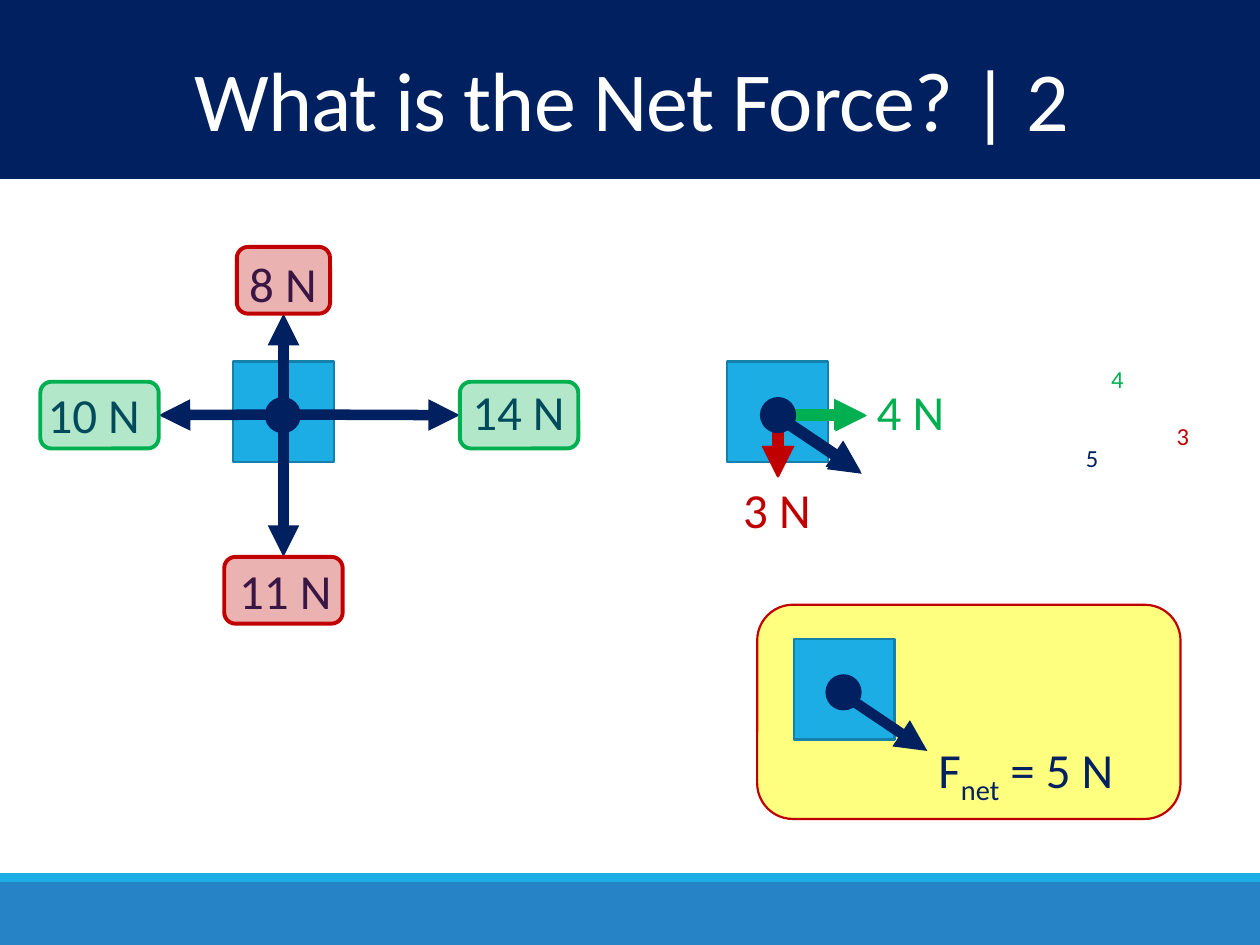
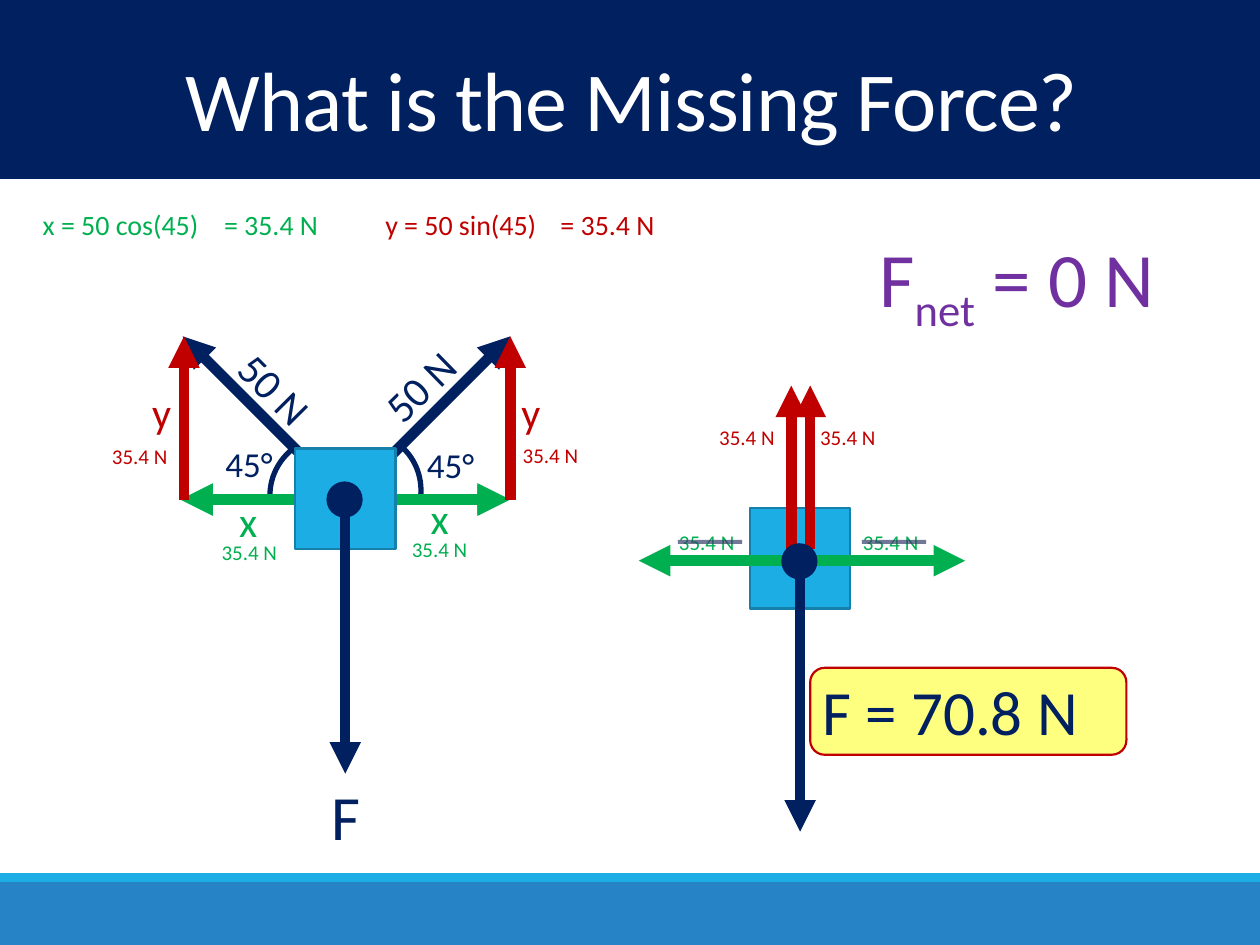
from dataclasses import dataclass
from typing import Optional

from lxml import etree
from pptx import Presentation
from pptx import util as u
from pptx.dml.color import RGBColor
from pptx.enum import shapes, text
from pptx.oxml.ns import qn

PX = 9144
WIDE, HIGH = 1000, 750


@dataclass(frozen=True)
class Theme:
    font: str = "Calibri"
    navy: str = "002060"
    red: str = "C00000"
    green: str = "00B050"
    purple: str = "7030A0"
    yellow: str = "FFFF00"
    white: str = "FFFFFF"
    slate: str = "344068"
    sky: str = "1CADE4"
    edge: str = "1580A9"
    base: str = "2683C6"
    title: int = 48
    huge: int = 44
    big: int = 36
    force: int = 28
    mid: int = 24
    angle: int = 20
    work: int = 16
    side: int = 14
    note: int = 12


T = Theme()
SHAPE = shapes.MSO_SHAPE


@dataclass(frozen=True)
class Box:
    x: int
    y: int
    w: int
    h: int
    fill: Optional[str] = None
    line: Optional[str] = None
    pen: float = 1.25
    kind: SHAPE = SHAPE.RECTANGLE
    alpha: int = 100
    turn: float = 0


@dataclass(frozen=True)
class Ray:
    x: int
    y: int
    dx: int
    dy: int
    color: str
    pen: float = 6
    head: bool = True
    alpha: int = 100


@dataclass(frozen=True)
class Label:
    x: int
    y: int
    w: int
    words: str
    size: int
    color: str
    turn: float = 0
    sub: str = ""
    rest: str = ""


def px(n: int) -> u.Emu:
    return u.Emu(n * PX)


def rgb(code: str) -> RGBColor:
    return RGBColor.from_string(code)


def fade(item, alpha: int) -> None:
    if alpha < 100:
        tint = item._element.spPr.find(".//" + qn("a:srgbClr"))
        etree.SubElement(tint, qn("a:alpha")).set("val", str(alpha * 1000))


def draw_box(slide, box: Box):
    item = slide.shapes.add_shape(box.kind, px(box.x), px(box.y), px(box.w), px(box.h))
    item.shadow.inherit = False
    item.rotation = box.turn
    if box.fill:
        item.fill.solid()
        item.fill.fore_color.rgb = rgb(box.fill)
    else:
        item.fill.background()
    if box.line:
        item.line.color.rgb = rgb(box.line)
        item.line.width = u.Pt(box.pen)
    else:
        item.line.fill.background()
    fade(item, box.alpha)
    return item


def draw_ray(slide, ray: Ray):
    item = slide.shapes.add_connector(
        shapes.MSO_CONNECTOR.STRAIGHT,
        px(ray.x), px(ray.y), px(ray.x + ray.dx), px(ray.y + ray.dy))
    item.line.color.rgb = rgb(ray.color)
    item.line.width = u.Pt(ray.pen)
    fade(item, ray.alpha)
    props = item._element.spPr
    if ray.head:
        etree.SubElement(props.find(qn("a:ln")), qn("a:tailEnd")).set("type", "triangle")
    etree.SubElement(props, qn("a:effectLst"))
    return item


def add_run(para, words: str, size: int, color: str):
    run = para.add_run()
    run.text = words
    run.font.name = T.font
    run.font.size = u.Pt(size)
    run.font.color.rgb = rgb(color)
    return run._r.get_or_add_rPr()


def draw_label(slide, tag: Label) -> None:
    high = round(tag.size * 1.22 * 100 / 72 + 10)
    item = slide.shapes.add_textbox(px(tag.x), px(tag.y), px(tag.w), px(high))
    item.rotation = tag.turn
    frame = item.text_frame
    frame.word_wrap = False
    frame.auto_size = text.MSO_AUTO_SIZE.SHAPE_TO_FIT_TEXT
    para = frame.paragraphs[0]
    add_run(para, tag.words, tag.size, tag.color)
    if tag.sub:
        add_run(para, tag.sub, tag.size, tag.color).set("baseline", "-25000")
        add_run(para, tag.rest, tag.size, tag.color)


def draw_block(slide, x: int, y: int) -> None:
    draw_box(slide, Box(x, y, 80, 80, T.sky, T.edge))


def draw_dot(slide, x: int, y: int) -> None:
    draw_box(slide, Box(x, y, 27, 27, T.navy, T.navy, kind=SHAPE.OVAL))


def draw_card(slide, x: int, y: int, w: int, h: int) -> None:
    draw_box(slide, Box(x, y, w, h, T.yellow, T.red, kind=SHAPE.ROUNDED_RECTANGLE, alpha=50))


def draw_frame(deck, title: str):
    slide = deck.slides.add_slide(deck.slide_layouts[6])
    for band in (Box(0, 700, WIDE, 50, T.base), Box(0, 693, WIDE, 7, T.sky),
                 Box(0, 0, WIDE, 142, T.navy)):
        draw_box(slide, band)
    frame = slide.shapes.add_textbox(px(3), px(42), px(997), px(84)).text_frame
    frame.word_wrap = True
    frame.vertical_anchor = text.MSO_ANCHOR.MIDDLE
    para = frame.paragraphs[0]
    para.alignment = text.PP_ALIGN.CENTER
    para.line_spacing = 0.85
    add_run(para, title, T.title, T.white).set("spc", "-50")
    return slide


def net_slide(deck) -> None:
    slide = draw_frame(deck, "What is the Net Force? | 2")
    draw_block(slide, 577, 287)
    for ray in (
        Ray(617, 329, 70, 0, T.green),
        Ray(617, 329, 0, 50, T.red),
        Ray(618, 329, 0, 50, T.red),
        Ray(613, 327, 70, 47, T.navy),
        Ray(618, 330, 70, 0, T.green),
    ):
        draw_ray(slide, ray)
    draw_card(slide, 601, 480, 336, 170)
    draw_block(slide, 185, 287)
    pulls = [draw_ray(slide, Ray(225, 329, dx, dy, T.navy))
             for dx, dy in ((0, -80), (0, 111), (140, 0), (-100, 0))]
    draw_dot(slide, 211, 316)
    draw_dot(slide, 604, 316)
    draw_ray(slide, Ray(614, 329, 70, 47, T.navy))
    draw_block(slide, 630, 507)
    draw_dot(slide, 656, 536)
    draw_ray(slide, Ray(666, 549, 70, 47, T.navy))
    for tag in (
        Label(188, 196, 74, "8 N", T.force, T.navy),
        Label(180, 440, 94, "11 N", T.force, T.navy),
        Label(365, 298, 94, "14 N", T.force, T.navy),
        Label(28, 300, 94, "10 N", T.force, T.navy),
        Label(686, 298, 82, "4 N", T.force, T.green),
        Label(580, 376, 82, "3 N", T.force, T.red),
        Label(735, 582, 186, "F", T.force, T.navy, sub="net", rest=" = 5 N"),
        Label(872, 284, 31, "4", T.side, T.green),
        Label(924, 329, 31, "3", T.side, T.red),
        Label(852, 347, 31, "5", T.side, T.navy),
    ):
        draw_label(slide, tag)
    spots = ((188, 196, 74, T.red, 2), (178, 442, 94, T.red, 0),
             (365, 303, 94, T.green, 1), (32, 303, 94, T.green, 3))
    for pull, (x, y, w, color, side) in zip(pulls, spots):
        box = draw_box(slide, Box(x, y, w, 53, color, color, 2.25,
                                  SHAPE.ROUNDED_RECTANGLE, 30))
        pull.end_connect(box, side)


def lost_slide(deck) -> None:
    slide = draw_frame(deck, "What is the Missing Force?")
    draw_card(slide, 643, 530, 251, 69)
    for dx in (130, -130):
        draw_ray(slide, Ray(275, 397, dx, -130, T.navy))
    for x, turn in ((246, 12.8), (216, 234.9)):
        arc = draw_box(slide, Box(x, 344, 88, 93, line=T.navy, pen=3,
                                  kind=SHAPE.ARC, turn=turn))
        arc.adjustments[0] = 176.796
        arc.adjustments[1] = 214.173
    for y in (397, 396):
        for dx in (130, -130):
            draw_ray(slide, Ray(274, y, dx, 0, T.green))
    for x in (405, 146):
        draw_ray(slide, Ray(x, 397, 0, -130, T.red))
    draw_block(slide, 234, 356)
    draw_ray(slide, Ray(274, 399, 0, 215, T.navy))
    draw_dot(slide, 260, 383)

    draw_block(slide, 595, 403)
    for ray in (
        Ray(635, 446, 0, 214, T.navy),
        Ray(636, 445, 130, 0, T.green),
        Ray(643, 436, 0, -130, T.red),
        Ray(637, 445, -130, 0, T.green),
        Ray(628, 436, 0, -130, T.red),
    ):
        draw_ray(slide, ray)
    draw_dot(slide, 621, 432)

    for tag in (
        Label(292, 281, 83, "50 N", T.mid, T.navy, 315.5),
        Label(177, 284, 83, "50 N", T.mid, T.navy, 45.3),
        Label(329, 347, 58, "45°", T.angle, T.navy),
        Label(169, 346, 58, "45°", T.angle, T.navy),
        Label(688, 178, 247, "F", T.huge, T.purple, sub="net", rest=" = 0 N"),
        Label(332, 386, 36, "x", T.mid, T.green),
        Label(180, 388, 36, "x", T.mid, T.green),
        Label(404, 302, 36, "y", T.mid, T.red),
        Label(111, 302, 36, "y", T.mid, T.red),
        Label(253, 612, 43, "F", T.big, T.navy),
        Label(643, 529, 251, "F = 70.8 N", T.big, T.navy),
        Label(24, 160, 159, "x = 50 cos(45)", T.work, T.green),
        Label(296, 160, 154, "y = 50 sin(45)", T.work, T.red),
        Label(168, 160, 106, "= 35.4 N", T.work, T.green),
        Label(435, 160, 106, "= 35.4 N", T.work, T.red),
    ):
        draw_label(slide, tag)
    for x, y, color in (
        (317, 421, T.green), (166, 423, T.green),
        (405, 346, T.red), (79, 347, T.red),
        (641, 332, T.red), (561, 332, T.red),
        (675, 415, T.green), (529, 415, T.green),
    ):
        draw_label(slide, Label(x, y, 68, "35.4 N", T.note, color))
    for x in (538, 684):
        draw_ray(slide, Ray(x, 430, 51, 0, T.slate, 2.25, False, 70))


def main() -> None:
    deck = Presentation()
    deck.slide_width, deck.slide_height = px(WIDE), px(HIGH)
    net_slide(deck)
    lost_slide(deck)
    deck.save("out.pptx")


if __name__ == "__main__":
    main()
